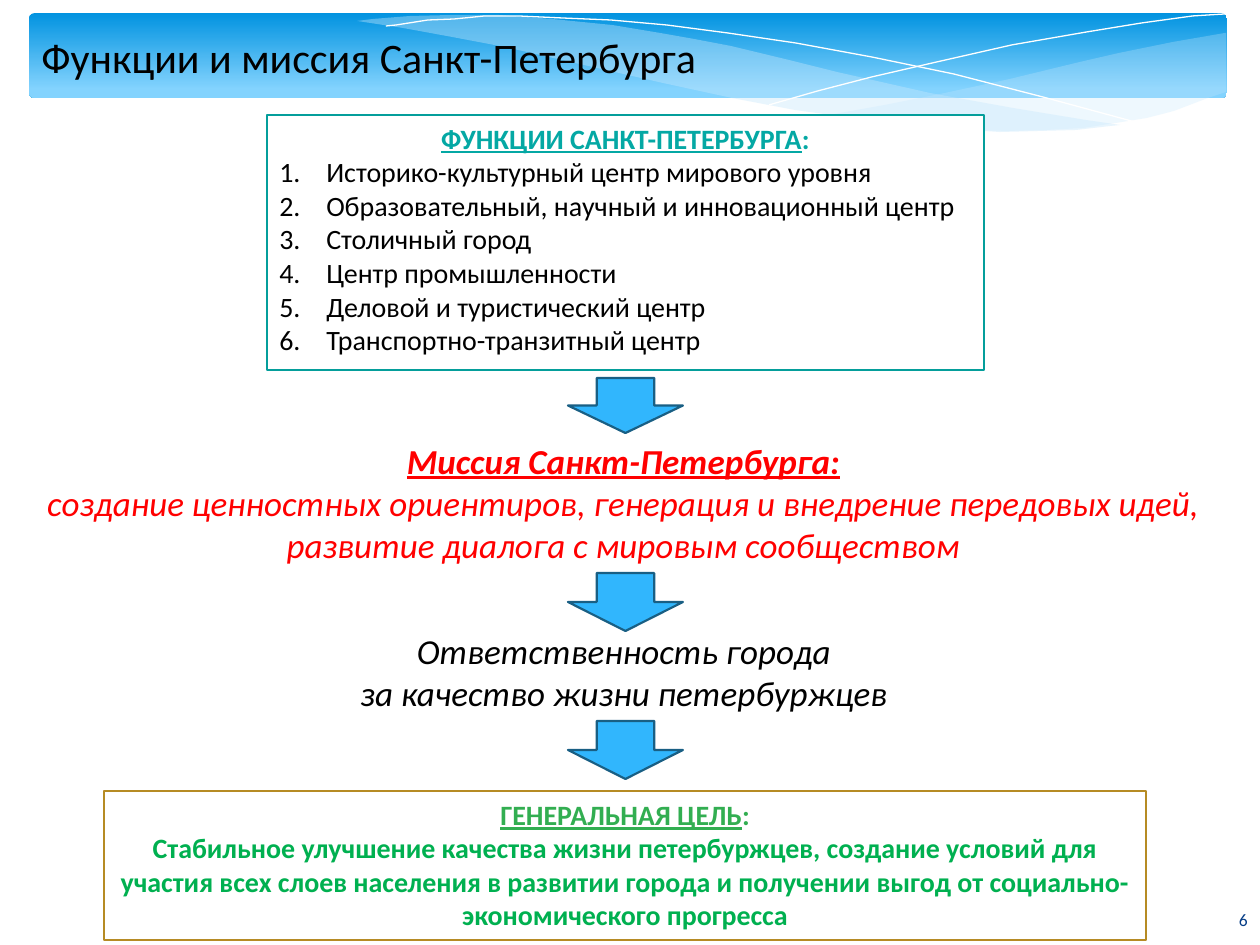
import lxml.etree
import pptx
import pptx.dml.color
import pptx.enum.shapes
import pptx.enum.text
import pptx.oxml.ns
import pptx.util

EMU_PER_PX = 914400 / 126
ALIGN = pptx.enum.text.PP_ALIGN
ANCHOR = pptx.enum.text.MSO_ANCHOR
SHAPE = pptx.enum.shapes.MSO_SHAPE

RIGHT_WAVE = [
    (1225, 33), (1173, 42), (1119, 53), (1080, 62), (1010, 79), (945, 93), (885, 105),
    (829, 115), (866, 120), (901, 124), (934, 127), (965, 130), (1008, 131), (1047, 130),
    (1083, 128), (1116, 123), (1147, 118), (1174, 111), (1208, 98), (1226, 92), (1226, 33)]
LEFT_WAVE = [
    (1120, 125), (1086, 120), (1013, 108), (930, 93), (837, 72), (789, 60), (731, 46),
    (694, 39), (660, 33), (612, 25), (552, 19), (499, 15), (451, 15), (410, 16), (373, 19),
    (357, 21), (403, 28), (452, 37), (505, 47), (562, 60), (663, 83), (732, 98), (795, 110),
    (853, 118), (906, 125), (954, 129), (1000, 132), (1039, 131), (1076, 130), (1110, 126)]
FALLING_LINE = [
    (386, 26), (396, 25), (428, 20), (454, 19), (484, 16), (520, 16), (563, 18), (611, 20),
    (667, 25), (728, 33), (796, 43), (872, 57), (954, 74), (1043, 97), (1139, 123)]
RISING_LINE = [
    (769, 105), (818, 91), (872, 77), (937, 62), (1012, 45), (1087, 32), (1142, 23),
    (1193, 16), (1225, 14)]

FUNCTIONS = [
    "Историко-культурный центр мирового уровня",
    "Образовательный, научный и инновационный центр",
    "Столичный город",
    "Центр промышленности",
    "Деловой и туристический центр",
    "Транспортно-транзитный центр",
]


def px(length):
    return pptx.util.Emu(round(length * EMU_PER_PX))


def color(value):
    return pptx.dml.color.RGBColor.from_string(value)


class SlideBuilder:
    font_name = "Calibri"
    line_width = 1.25

    def __init__(self, page):
        self.page = page

    def banner(self, left, top, width, height):
        shape = self.page.shapes.add_shape(
            SHAPE.ROUNDED_RECTANGLE, px(left), px(top), px(width), px(height))
        shape.shadow.inherit = False
        shape.adjustments[0] = 0.07
        shape.line.fill.background()
        shape.fill.gradient()
        shape.fill.gradient_angle = 270
        stops = zip(shape.fill.gradient_stops, (0, 0.9), ("0293E0", "83D3FE"))
        for stop, position, value in stops:
            stop.position = position
            stop.color.rgb = color(value)

    def freeform(self, points, closed):
        builder = self.page.shapes.build_freeform(*points[0], scale=EMU_PER_PX)
        builder.add_line_segments(points[1:], close=closed)
        shape = builder.convert_to_shape()
        shape.shadow.inherit = False
        return shape

    def wave(self, points, opacity):
        """Draw a translucent area; opacity is in percent."""
        shape = self.freeform(points, True)
        shape.line.fill.background()
        shape.fill.solid()
        shape.fill.fore_color.rgb = color("C6E7FC")
        tint = shape.fill._xPr.find(".//" + pptx.oxml.ns.qn("a:srgbClr"))
        alpha = lxml.etree.SubElement(tint, pptx.oxml.ns.qn("a:alpha"))
        alpha.set("val", str(opacity * 1000))

    def curve(self, points):
        shape = self.freeform(points, False)
        shape.fill.background()
        shape.line.color.rgb = color("FFFFFF")
        shape.line.width = pptx.util.Pt(0)

    def outlined(self, kind, left, top, width, height, fill, line):
        shape = self.page.shapes.add_shape(kind, px(left), px(top), px(width), px(height))
        shape.shadow.inherit = False
        shape.fill.solid()
        shape.fill.fore_color.rgb = color(fill)
        shape.line.color.rgb = color(line)
        shape.line.width = pptx.util.Pt(self.line_width)
        return shape

    def arrow(self, top, height):
        self.outlined(SHAPE.DOWN_ARROW, 568, top, 115, height, "31B6FD", "195F84")

    def frame(self, left, top, width, height, line):
        """Add a white outlined box and return its text frame."""
        box = self.outlined(SHAPE.RECTANGLE, left, top, width, height, "FFFFFF", line)
        return self.prepare(box, ANCHOR.TOP)

    def text_box(self, left, top, width, height, anchor=ANCHOR.TOP):
        box = self.page.shapes.add_textbox(px(left), px(top), px(width), px(height))
        return self.prepare(box, anchor)

    def prepare(self, box, anchor):
        box.text_frame.word_wrap = True
        box.text_frame.vertical_anchor = anchor
        return box.text_frame

    def paragraph(self, frame, text, size, fill, align=ALIGN.CENTER,
                  bold=False, italic=False, underline=False, numbered=False):
        """Append a paragraph; each newline in text becomes a line break."""
        first = frame.paragraphs[0]
        para = frame.add_paragraph() if first.runs else first
        para.alignment = align
        if numbered:
            self.number(para)
        font = para.font
        font.name, font.size = self.font_name, pptx.util.Pt(size)
        font.color.rgb = color(fill)
        font.bold, font.italic, font.underline = bold, italic, underline
        for index, line in enumerate(text.split("\n")):
            if index:
                para.add_line_break()
            para.add_run().text = line
        return para

    def number(self, para):
        properties = para._p.get_or_add_pPr()
        indent = px(47)
        properties.set("marL", str(indent))
        properties.set("indent", str(-indent))
        mark = lxml.etree.SubElement(properties, pptx.oxml.ns.qn("a:buAutoNum"))
        mark.set("type", "arabicPeriod")

    def heading(self, frame, text, fill):
        """Append an underlined heading with a plain colon after it."""
        para = self.paragraph(frame, text, 16, fill, bold=True)
        para.runs[0].font.underline = True
        para.add_run().text = ":"


def main():
    deck = pptx.Presentation()
    deck.slide_width, deck.slide_height = px(1260), px(945)
    page = deck.slides.add_slide(deck.slide_layouts[6])
    slide = SlideBuilder(page)

    slide.banner(29, 13, 1198, 85)
    slide.wave(RIGHT_WAVE, 29)
    slide.wave(LEFT_WAVE, 40)
    slide.curve(FALLING_LINE)
    slide.curve(RISING_LINE)

    page_number = slide.text_box(1100, 895, 160, 50, ANCHOR.MIDDLE)
    slide.paragraph(page_number, "6", 10, "073E87", ALIGN.RIGHT)
    title = slide.text_box(29, 25, 1160, 63)
    slide.paragraph(title, "Функции и миссия Санкт-Петербурга", 24, "000000", ALIGN.LEFT)

    functions = slide.frame(267, 115, 717, 255, "049E9B")
    slide.heading(functions, "ФУНКЦИИ САНКТ-ПЕТЕРБУРГА", "04A8A4")
    for name in FUNCTIONS:
        slide.paragraph(functions, name, 16, "000000", ALIGN.LEFT, numbered=True)

    mission = slide.text_box(18, 433, 1211, 140)
    slide.paragraph(mission, "Миссия Санкт-Петербурга:", 20, "FF0000",
                    bold=True, italic=True, underline=True)
    slide.paragraph(
        mission,
        "создание ценностных ориентиров, генерация и внедрение передовых идей,\n"
        "развитие диалога с мировым сообществом",
        20, "FF0000", italic=True)

    duty = slide.text_box(341, 623, 566, 97)
    slide.paragraph(duty, "Ответственность города\nза качество жизни петербуржцев",
                    20, "000000", italic=True)

    goal = slide.frame(104, 791, 1042, 149, "B68B24")
    slide.heading(goal, "ГЕНЕРАЛЬНАЯ ЦЕЛЬ", "32AE51")
    slide.paragraph(
        goal,
        "Стабильное улучшение качества жизни петербуржцев, создание условий для "
        "участия всех слоев населения в развитии города и получении выгод от "
        "социально-экономического прогресса",
        16, "00B050", bold=True)

    for top, height in ((378, 55), (573, 58), (721, 58)):
        slide.arrow(top, height)

    deck.save("out.pptx")


if __name__ == "__main__":
    main()
